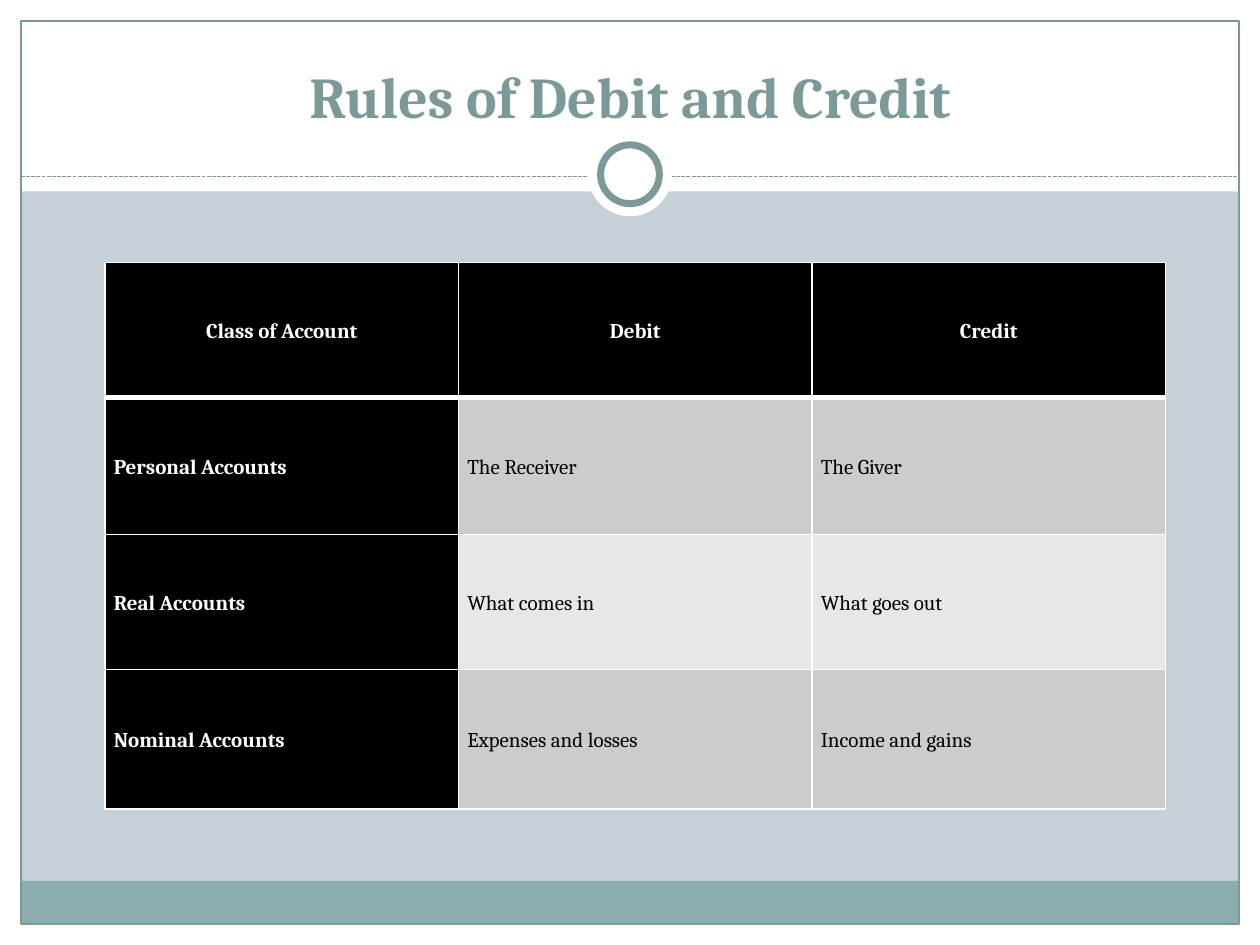
from lxml.etree import SubElement
from pptx import Presentation
from pptx.dml.color import RGBColor
from pptx.enum.dml import MSO_LINE
from pptx.enum.shapes import MSO_CONNECTOR, MSO_SHAPE
from pptx.enum.text import MSO_ANCHOR, PP_ALIGN
from pptx.oxml.ns import qn
from pptx.util import Inches, Pt

WHITE = RGBColor(0xFF, 0xFF, 0xFF)
BLACK = RGBColor(0x00, 0x00, 0x00)
MIST = RGBColor(0xC5, 0xD1, 0xD7)
TEAL = RGBColor(0x8C, 0xAD, 0xAE)
SLATE = RGBColor(0x7C, 0x99, 0x9A)
BANDS = (RGBColor(0xCC, 0xCC, 0xCC), RGBColor(0xE7, 0xE7, 0xE7))

COLUMNS, ROWS = 60, 45
ACCOUNT_RULES = [
    ("Class of Account", "Debit", "Credit"),
    ("Personal Accounts", "The Receiver", "The Giver"),
    ("Real Accounts", "What comes in", "What goes out"),
    ("Nominal Accounts", "Expenses and losses", "Income and gains"),
]
RULE_HEIGHTS = (6.42, 6.54, 6.42, 6.66)


class SlideBuilder:
    """Draws styled elements on one slide laid out on a 60 by 45 grid."""

    font = "Cambria"

    def __init__(self, deck):
        self.column = deck.slide_width / COLUMNS
        self.row = deck.slide_height / ROWS
        self.slide = deck.slides.add_slide(deck.slide_layouts[6])

    def place(self, x, y, width, height):
        return (round(x * self.column), round(y * self.row),
                round(width * self.column), round(height * self.row))

    def background(self, color):
        fill = self.slide.background.fill
        fill.solid()
        fill.fore_color.rgb = color

    def shape(self, area, fill=None, line=None, weight=0.75, kind=MSO_SHAPE.RECTANGLE):
        panel = self.slide.shapes.add_shape(kind, *self.place(*area))
        panel.shadow.inherit = False
        if fill is None:
            panel.fill.background()
        else:
            panel.fill.solid()
            panel.fill.fore_color.rgb = fill
        if line is None:
            panel.line.fill.background()
        else:
            panel.line.color.rgb = line
            panel.line.width = Pt(weight)

    def dashed_rule(self, start, end, y, color):
        left, top, right, bottom = self.place(start, y, end, y)
        rule = self.slide.shapes.add_connector(
            MSO_CONNECTOR.STRAIGHT, left, top, right, bottom)
        rule.line.color.rgb = color
        rule.line.width = Pt(0.75)
        rule.line.dash_style = MSO_LINE.SQUARE_DOT
        SubElement(rule._element.spPr, qn("a:effectLst"))

    def add_text(self, paragraph, text, size, color, bold, align):
        paragraph.alignment = align
        run = paragraph.add_run()
        run.text = text
        run.font.name = self.font
        run.font.size = Pt(size)
        run.font.bold = bold
        run.font.color.rgb = color

    def title(self, area, text):
        frame = self.slide.shapes.add_textbox(*self.place(*area)).text_frame
        frame.word_wrap = True
        frame.vertical_anchor = MSO_ANCHOR.BOTTOM
        self.add_text(frame.paragraphs[0], text, 33, SLATE, True, PP_ALIGN.CENTER)

    def borders(self, cell, header):
        properties = cell._tc.get_or_add_tcPr()
        weights = {"L": 1, "R": 1, "T": 1, "B": 3 if header else 1}
        for side, weight in weights.items():
            border = SubElement(properties, qn(f"a:ln{side}"), w=str(Pt(weight)))
            paint = SubElement(border, qn("a:solidFill"))
            SubElement(paint, qn("a:srgbClr"), val=str(WHITE))

    def cell(self, cell, text, header, label, band):
        self.borders(cell, header)
        cell.fill.solid()
        cell.fill.fore_color.rgb = BLACK if label else band
        cell.vertical_anchor = MSO_ANCHOR.MIDDLE
        cell.margin_left = cell.margin_right = Inches(0.07)
        cell.margin_top = cell.margin_bottom = 0
        paragraph = cell.text_frame.paragraphs[0]
        paragraph.line_spacing = 1.15
        self.add_text(paragraph, text, 12, WHITE if label else BLACK, label,
                      PP_ALIGN.CENTER if header else PP_ALIGN.LEFT)

    def table(self, x, y, width, heights, records):
        area = self.place(x, y, width, sum(heights))
        grid = self.slide.shapes.add_table(len(records), len(records[0]), *area).table
        for column in grid.columns:
            column.width = round(area[2] / len(records[0]))
        for r, (record, height) in enumerate(zip(records, heights)):
            grid.rows[r].height = round(height * self.row)
            for c, text in enumerate(record):
                header = r == 0
                self.cell(grid.cell(r, c), text, header, header or c == 0,
                          BANDS[(r - 1) % 2])


def main():
    deck = Presentation()
    deck.slide_width, deck.slide_height = Inches(10), Inches(7.5)
    page = SlideBuilder(deck)

    page.background(MIST)
    margins = [(0, 44, 60, 1), (0, 0, 60, 9.12), (0, 0, 1, 45), (59, 0, 1, 45)]
    for margin in margins:
        page.shape(margin, WHITE)
    page.shape((1, 41.95, 58, 2.05), TEAL)
    page.shape((1, 1, 58, 43), line=SLATE)
    page.dashed_rule(1, 59, 8.4, SLATE)
    page.shape((28, 6.3, 4, 4), WHITE, kind=MSO_SHAPE.OVAL)
    page.shape((28.6, 6.9, 2.8, 2.8), WHITE, SLATE, 4, MSO_SHAPE.OVAL)
    page.title((2, 1.5, 56, 5), "Rules of Debit and Credit")
    page.table(5, 12.5, 50.5, RULE_HEIGHTS, ACCOUNT_RULES)

    deck.save("out.pptx")


if __name__ == "__main__":
    main()
